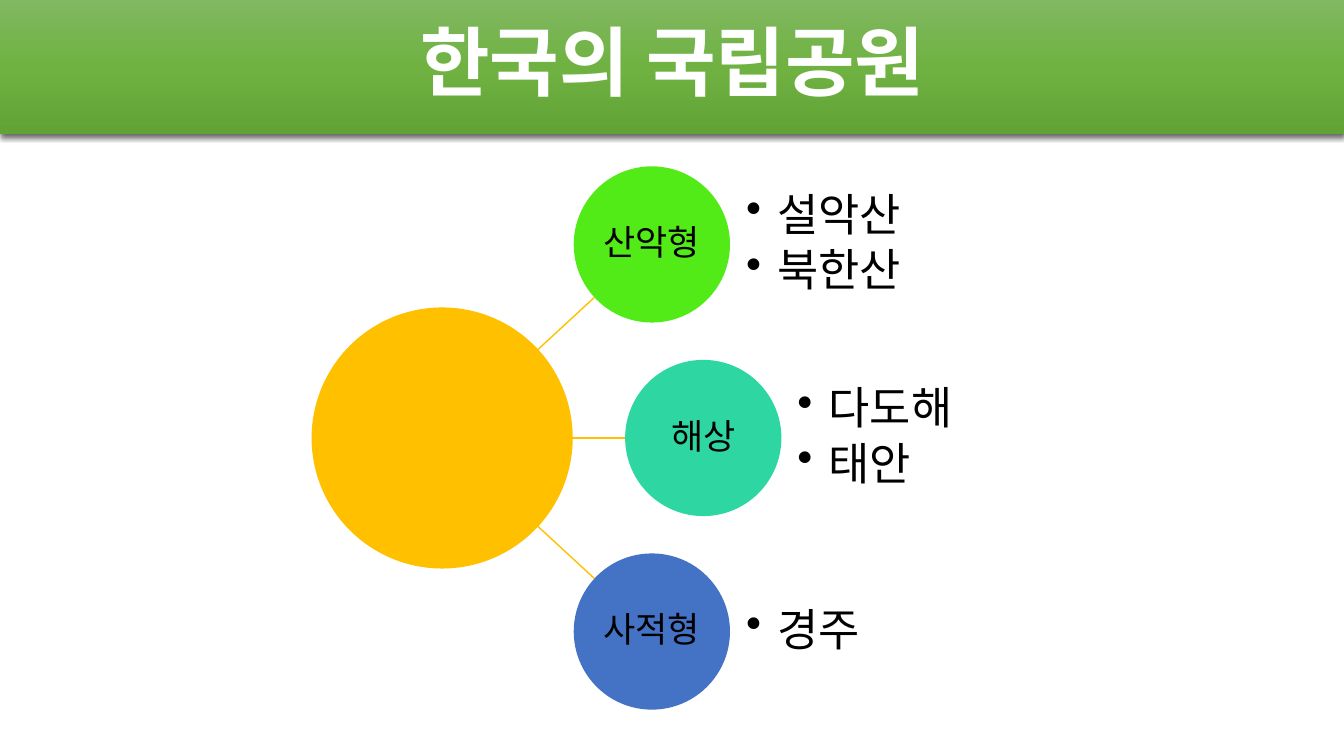
from math import hypot

from lxml.etree import SubElement
from pptx import Presentation
from pptx.dml.color import RGBColor
from pptx.enum.shapes import MSO_CONNECTOR as CONNECTOR, MSO_SHAPE as SHAPE
from pptx.enum.text import MSO_ANCHOR as ANCHOR, PP_ALIGN as ALIGN
from pptx.oxml import parse_xml
from pptx.oxml.ns import nsdecls, qn
from pptx.util import Inches, Pt

FONT = "Noto Sans CJK KR"
WHITE = RGBColor(0xFF, 0xFF, 0xFF)
BLACK = RGBColor(0x00, 0x00, 0x00)
AMBER = RGBColor(0xFF, 0xC0, 0x00)
LIME = RGBColor(0x53, 0xEB, 0x17)
TEAL = RGBColor(0x2E, 0xD7, 0xA1)
BLUE = RGBColor(0x44, 0x72, 0xC4)
BANNER_STOPS = [
    (0, RGBColor(0x81, 0xB8, 0x61)),
    (50, RGBColor(0x6F, 0xB2, 0x42)),
    (100, RGBColor(0x62, 0xA3, 0x36)),
]

HUB_X, HUB_Y, HUB_SIZE = 4.385, 4.345, 2.59
SPOKE_START = 5.29
PARK_SIZE, PARK_STEP = 1.55, 1.92
LIST_GAP, LIST_WIDTH = 0.16, 2.33

PARK_TYPES = [
    ("산악형", 6.465, LIME, ["설악산", "북한산"]),
    ("해상", 6.975, TEAL, ["다도해", "태안"]),
    ("사적형", 6.465, BLUE, ["경주"]),
]


def style_paragraph(paragraph, text, size, color, bold=False, after=0, bullet=False):
    paragraph.text = text
    paragraph.line_spacing = 0.9
    properties = paragraph._p.get_or_add_pPr()
    if after:
        spacing = SubElement(properties, qn("a:spcAft"))
        SubElement(spacing, qn("a:spcPct")).set("val", str(after * 1000))
    if bullet:
        indent = Inches(0.31)
        properties.set("marL", str(indent))
        properties.set("indent", str(-indent))
        SubElement(properties, qn("a:buChar")).set("char", "•")
    font = paragraph.font
    font.name = FONT
    font.size = Pt(size)
    font.bold = bold
    font.color.rgb = color
    SubElement(properties.find(qn("a:defRPr")), qn("a:ea")).set("typeface", FONT)


def prepare_frame(frame, margin):
    frame.word_wrap = True
    frame.vertical_anchor = ANCHOR.MIDDLE
    frame.margin_left = frame.margin_right = Inches(margin)
    frame.margin_top = frame.margin_bottom = Inches(margin)


def add_banner(slide):
    banner = slide.shapes.add_shape(SHAPE.RECTANGLE, 0, 0, Inches(13.33), Inches(1.33))
    banner.line.fill.background()
    stops = "".join(
        f'<a:gs pos="{position * 1000}"><a:srgbClr val="{color}"/></a:gs>'
        for position, color in BANNER_STOPS
    )
    gradient = parse_xml(
        f'<a:gradFill {nsdecls("a")} rotWithShape="1"><a:gsLst>{stops}</a:gsLst>'
        '<a:lin ang="5400000" scaled="0"/></a:gradFill>'
    )
    shadow = parse_xml(
        f'<a:effectLst {nsdecls("a")}><a:outerShdw blurRad="{Pt(4.5)}" dist="{Pt(1.5)}" '
        'dir="5400000" algn="ctr" rotWithShape="0"><a:srgbClr val="000000">'
        '<a:alpha val="63000"/></a:srgbClr></a:outerShdw></a:effectLst>'
    )
    properties = banner._element.spPr
    properties.find(qn("a:prstGeom")).addnext(gradient)
    properties.append(shadow)


def add_title(slide, text):
    title = slide.shapes.add_textbox(Inches(0.92), Inches(-0.01), Inches(11.5), Inches(1.33))
    prepare_frame(title.text_frame, 0.05)
    paragraph = title.text_frame.paragraphs[0]
    paragraph.alignment = ALIGN.CENTER
    style_paragraph(paragraph, text, 54, WHITE, bold=True)


def add_circle(slide, center_x, center_y, size, color):
    circle = slide.shapes.add_shape(
        SHAPE.OVAL, Inches(center_x - size / 2), Inches(center_y - size / 2),
        Inches(size), Inches(size),
    )
    circle.shadow.inherit = False
    circle.fill.solid()
    circle.fill.fore_color.rgb = color
    circle.line.fill.background()
    return circle


def add_spoke(slide, park_x, park_y):
    run, rise = park_x - HUB_X, park_y - HUB_Y
    start = (SPOKE_START - HUB_X) / run
    end = 1 - PARK_SIZE / 2 / hypot(run, rise)
    spoke = slide.shapes.add_connector(
        CONNECTOR.STRAIGHT,
        Inches(HUB_X + run * start), Inches(HUB_Y + rise * start),
        Inches(HUB_X + run * end), Inches(HUB_Y + rise * end),
    )
    spoke.line.color.rgb = AMBER
    spoke.line.width = Pt(1)
    SubElement(spoke._element.spPr, qn("a:effectLst"))


def add_park_type(slide, label, center_x, center_y, color):
    circle = add_circle(slide, center_x, center_y, PARK_SIZE, color)
    prepare_frame(circle.text_frame, 0.02)
    paragraph = circle.text_frame.paragraphs[0]
    paragraph.alignment = ALIGN.CENTER
    style_paragraph(paragraph, label, 25, BLACK, after=35)


def add_park_list(slide, parks, center_x, center_y):
    radius = PARK_SIZE / 2
    park_list = slide.shapes.add_textbox(
        Inches(center_x + radius + LIST_GAP), Inches(center_y - radius),
        Inches(LIST_WIDTH), Inches(PARK_SIZE),
    )
    frame = park_list.text_frame
    prepare_frame(frame, 0)
    for index, park in enumerate(parks):
        paragraph = frame.add_paragraph() if index else frame.paragraphs[0]
        style_paragraph(paragraph, park, 32, BLACK, after=15, bullet=True)


def main():
    presentation = Presentation()
    presentation.slide_width = Inches(13.33)
    presentation.slide_height = Inches(7.5)
    slide = presentation.slides.add_slide(presentation.slide_layouts[6])

    add_banner(slide)
    add_title(slide, "한국의 국립공원")
    rows = [HUB_Y + (index - 1) * PARK_STEP for index in range(len(PARK_TYPES))]
    for (_, center_x, _, _), center_y in zip(PARK_TYPES, rows):
        add_spoke(slide, center_x, center_y)
    add_circle(slide, HUB_X, HUB_Y, HUB_SIZE, AMBER)
    for (label, center_x, color, parks), center_y in zip(PARK_TYPES, rows):
        add_park_type(slide, label, center_x, center_y, color)
        add_park_list(slide, parks, center_x, center_y)

    presentation.save("out.pptx")


if __name__ == "__main__":
    main()
